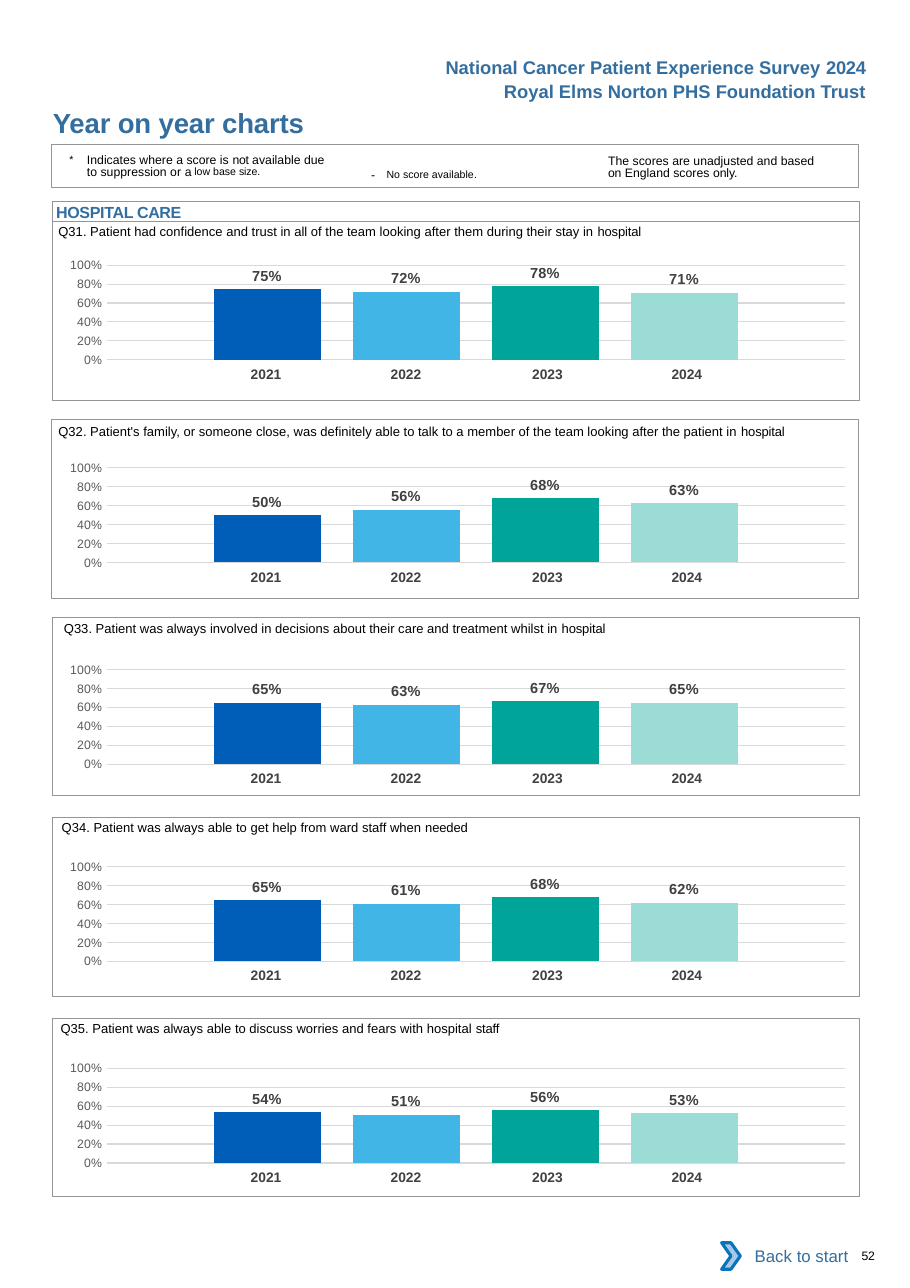
from lxml import etree
from pptx import Presentation
from pptx.chart.data import CategoryChartData
from pptx.dml.color import RGBColor
from pptx.enum.chart import XL_CHART_TYPE, XL_LABEL_POSITION, XL_TICK_MARK
from pptx.enum.shapes import MSO_SHAPE
from pptx.enum.text import MSO_ANCHOR, PP_ALIGN
from pptx.oxml import parse_xml
from pptx.oxml.ns import nsdecls, qn
from pptx.util import Inches, Pt

COLORS = {
    "heading": "336E9F", "text": "000000", "year": "414042", "label": "404040",
    "axis": "595959", "grid": "D9D9D9", "frame": "939598", "white": "FFFFFF",
    "chevron": "A8C7E9", "chevron_line": "0A74BB",
    "2021": "005EB8", "2022": "41B6E6", "2023": "00A499", "2024": "9CDCD7",
}
YEARS = ["2021", "2022", "2023", "2024"]
NO_STYLE_TABLE = "{2D5ABB26-0587-4C30-8999-92F81FD0307C}"


def style_font(font, size, color, bold=False):
    font.name = "Arial"
    font.size = Pt(size)
    font.bold = bold
    font.color.rgb = RGBColor.from_string(COLORS[color])


def write(sp, runs, size, color="text", bold=False, align=PP_ALIGN.LEFT,
          insets=(0, 0, 0, 0), line=None, wrap=True):
    """Runs are (text, spacing in pt, optional size, optional baseline in %)."""
    tf = sp.text_frame
    tf.word_wrap = wrap
    tf.vertical_anchor = MSO_ANCHOR.TOP
    tf.margin_left, tf.margin_top, tf.margin_right, tf.margin_bottom = map(Inches, insets)
    p = tf.paragraphs[0]
    p.alignment = align
    if line:
        p.line_spacing = Pt(line)
    for text, spacing, *raised in runs:
        r = p.add_run()
        r.text = text
        style_font(r.font, raised[0] if raised else size, color, bold)
        rPr = r.font._element
        if spacing:
            rPr.set("spc", str(round(spacing * 100)))
        if raised:
            rPr.set("baseline", str(raised[1] * 1000))
    return p


prs = Presentation()
prs.slide_width, prs.slide_height = Inches(8.26), Inches(11.69)
s = prs.slides.add_slide(prs.slide_layouts[6])
shapes = s.shapes

# Survey, trust and page headings
default_insets = (0.1, 0.05, 0.1, 0.05)
headings = [
    (0.46, [("National Cancer Patient Experience Survey ", 0), ("2024", -0.2)]),
    (0.68, [("Royal Elms Norton PHS Foundation Trust", 0)]),
]
for top, runs in headings:
    sp = shapes.add_textbox(Inches(3.92), Inches(top), Inches(4.04), Inches(0.3))
    write(sp, runs, 12, "heading", True, PP_ALIGN.RIGHT, default_insets, wrap=False)
sp = shapes.add_textbox(Inches(0.48), Inches(0.96), Inches(4.5), Inches(0.3))
write(sp, [("Year on year charts", -0.1)], 18, "heading", True)

# Notes on the scores
sp = shapes.add_textbox(Inches(5.52), Inches(1.38), Inches(2.01), Inches(0.27))
write(sp, [("The scores are unadjusted and based", 0), (" on", -0.2),
           (" England scores ", 0), ("only.", -0.1)],
      8, insets=(0, 0.03, 0, 0), line=8.1)
sp = shapes.add_textbox(Inches(3.27), Inches(1.41), Inches(1.83), Inches(0.24))
write(sp, [("- ", 2.6), ("No score available", 0, 12, 3), (".", -0.1, 12, 3)],
      8, insets=default_insets)
sp = shapes.add_textbox(Inches(0.63), Inches(1.38), Inches(2.4), Inches(0.27))
p = write(sp, [("*\t", 0, 12, 3), ("Indicates where a score is ", 0), ("not ", -0.2),
               ("available due to suppression or ", 0), ("a ", -0.5),
               ("low base", 0, 12, 7), (" size.", -0.1, 12, 7)],
          8, insets=(0, 0.03, 0, 0), line=8.1)
pPr = p._p.get_or_add_pPr()
pPr.set("marL", str(Inches(0.16)))
pPr.set("indent", str(-Inches(0.16)))

# Frames: notes, section heading, one per question
panels = [
    # frame left, frame top, chart top, question left, question top, question, last word, scores
    (0.48, 2.01, 2.22, 0.53, 1.94, "Q31. Patient had confidence and trust in all of the team "
     "looking after them during their stay in ", "hospital", (0.75, 0.72, 0.78, 0.71)),
    (0.47, 3.81, 4.06, 0.53, 3.75, "Q32. Patient's family, or someone close, was definitely able "
     "to talk to a member of the team looking after the patient in ", "hospital",
     (0.5, 0.56, 0.68, 0.63)),
    (0.48, 5.6, 5.89, 0.58, 5.54, "Q33. Patient was always involved in decisions about their "
     "care and treatment whilst in ", "hospital", (0.65, 0.63, 0.67, 0.65)),
    (0.48, 7.42, 7.68, 0.56, 7.35, "Q34. Patient was always able to get help from ward staff "
     "when ", "needed", (0.65, 0.61, 0.68, 0.62)),
    (0.48, 9.24, 9.51, 0.55, 9.17, "Q35. Patient was always able to discuss worries and fears "
     "with hospital ", "staff", (0.54, 0.51, 0.56, 0.53)),
]
frames = [(0.47, 1.31, 0.39, 0.75), (0.48, 1.83, 0.18, 0.5)]
frames += [(left, top, 1.62, 0.5) for left, top, *_ in panels]
for left, top, height, weight in frames:
    sp = shapes.add_shape(MSO_SHAPE.RECTANGLE, Inches(left), Inches(top),
                          Inches(7.32), Inches(height))
    sp.shadow.inherit = False
    sp.fill.background()
    sp.line.color.rgb = RGBColor.from_string(COLORS["frame"])
    sp.line.width = Pt(weight)
    if top == 1.83:
        write(sp, [("HOSPITAL CARE", -0.2)], 10.5, "heading", True, insets=(0.03, 0.01, 0, 0))

for _, _, chart_top, text_left, text_top, question, last_word, scores in panels:
    # Question
    sp = shapes.add_textbox(Inches(text_left), Inches(text_top), Inches(7.22), Inches(0.24))
    write(sp, [(question, 0), (last_word, -0.1)], 8.5, insets=(0, 0.09, 0, 0))

    # Year labels under the columns
    frame = shapes.add_table(1, 4, Inches(1.73), Inches(chart_top + 1.06),
                             Inches(5.15), Inches(0.27))
    table = frame.table
    table.first_row = table.horz_banding = False
    table._tbl.tblPr.find(qn("a:tableStyleId")).text = NO_STYLE_TABLE
    for i, (year, width, right) in enumerate(
            zip(YEARS, (1.27, 1.27, 1.34, 1.27), (0, 0, 0.04, 0.12))):
        table.columns[i].width = Inches(width)
        cell = table.cell(0, i)
        cell.fill.background()
        cell.margin_left, cell.margin_right = Inches(0.1), Inches(right)
        p = cell.text_frame.paragraphs[0]
        p.alignment = PP_ALIGN.CENTER
        r = p.add_run()
        r.text = year
        style_font(r.font, 9, "year", True)

    # Chart with one series per year
    data = CategoryChartData(number_format="0%")
    data.categories = ["1"]
    for i, score in enumerate(scores, 1):
        data.add_series(f"Series {i}", [score])
    chart = shapes.add_chart(XL_CHART_TYPE.COLUMN_CLUSTERED, Inches(0.39), Inches(chart_top),
                             Inches(7.32), Inches(1.29), data).chart
    chart.has_legend = chart.has_title = False
    chart.font.name, chart.font.size = "Calibri", Pt(10)
    chart.category_axis.visible = False
    axis = chart.value_axis
    axis.minimum_scale, axis.maximum_scale, axis.major_unit = 0, 1, 0.2
    axis.major_tick_mark = axis.minor_tick_mark = XL_TICK_MARK.NONE
    axis.format.line.fill.background()
    axis.major_gridlines.format.line.color.rgb = RGBColor.from_string(COLORS["grid"])
    axis.major_gridlines.format.line.width = Pt(0.75)
    axis.tick_labels.number_format = "0%"
    axis.tick_labels.number_format_is_linked = False
    style_font(axis.tick_labels.font, 8, "axis")
    plot = chart.plots[0]
    plot.vary_by_categories = False
    plot.gap_width, plot.overlap = 200, -30
    for series, year in zip(plot.series, YEARS):
        series.format.fill.solid()
        series.format.fill.fore_color.rgb = RGBColor.from_string(COLORS[year])
        labels = series.data_labels
        labels.show_value = True
        labels.position = XL_LABEL_POSITION.OUTSIDE_END
        labels.number_format, labels.number_format_is_linked = "0%", False
        style_font(labels.font, 9.5, "label", True)

    # Fixed plot area and clear chart background
    chart_space = chart._chartSpace
    plot_area = chart_space.chart.plotArea
    for old in plot_area.findall(qn("c:layout")):
        plot_area.remove(old)
    layout = etree.Element(qn("c:layout"))
    manual = etree.SubElement(layout, qn("c:manualLayout"))
    for tag, value in (("layoutTarget", "inner"), ("xMode", "edge"), ("yMode", "edge"),
                       ("x", "0.079"), ("y", "0.145"), ("w", "0.915"), ("h", "0.666")):
        etree.SubElement(manual, qn("c:" + tag)).set("val", value)
    plot_area.insert(0, layout)
    chart_space.chart.addnext(parse_xml(
        f'<c:spPr {nsdecls("c", "a")}><a:noFill/><a:ln><a:noFill/></a:ln></c:spPr>'))

# Back to start button and page number
sp = shapes.add_shape(MSO_SHAPE.RECTANGLE, Inches(6.62), Inches(11.19), Inches(1.18), Inches(0.42))
sp.shadow.inherit = False
sp.fill.solid()
sp.fill.fore_color.rgb = RGBColor.from_string(COLORS["white"])
sp.line.fill.background()
write(sp, [("Back to start", 0)], 11, "heading", align=PP_ALIGN.RIGHT, insets=default_insets)
sp.text_frame.vertical_anchor = MSO_ANCHOR.MIDDLE
sp = shapes.add_shape(MSO_SHAPE.CHEVRON, Inches(6.55), Inches(11.28), Inches(0.17), Inches(0.24))
sp.shadow.inherit = False
sp.fill.solid()
sp.fill.fore_color.rgb = RGBColor.from_string(COLORS["chevron"])
sp.line.color.rgb = RGBColor.from_string(COLORS["chevron_line"])
sp.line.width = Pt(2)
sp = shapes.add_textbox(Inches(7.82), Inches(11.33), Inches(0.41), Inches(0.13))
write(sp, [("52", -0.2)], 8)

prs.save("out.pptx")
